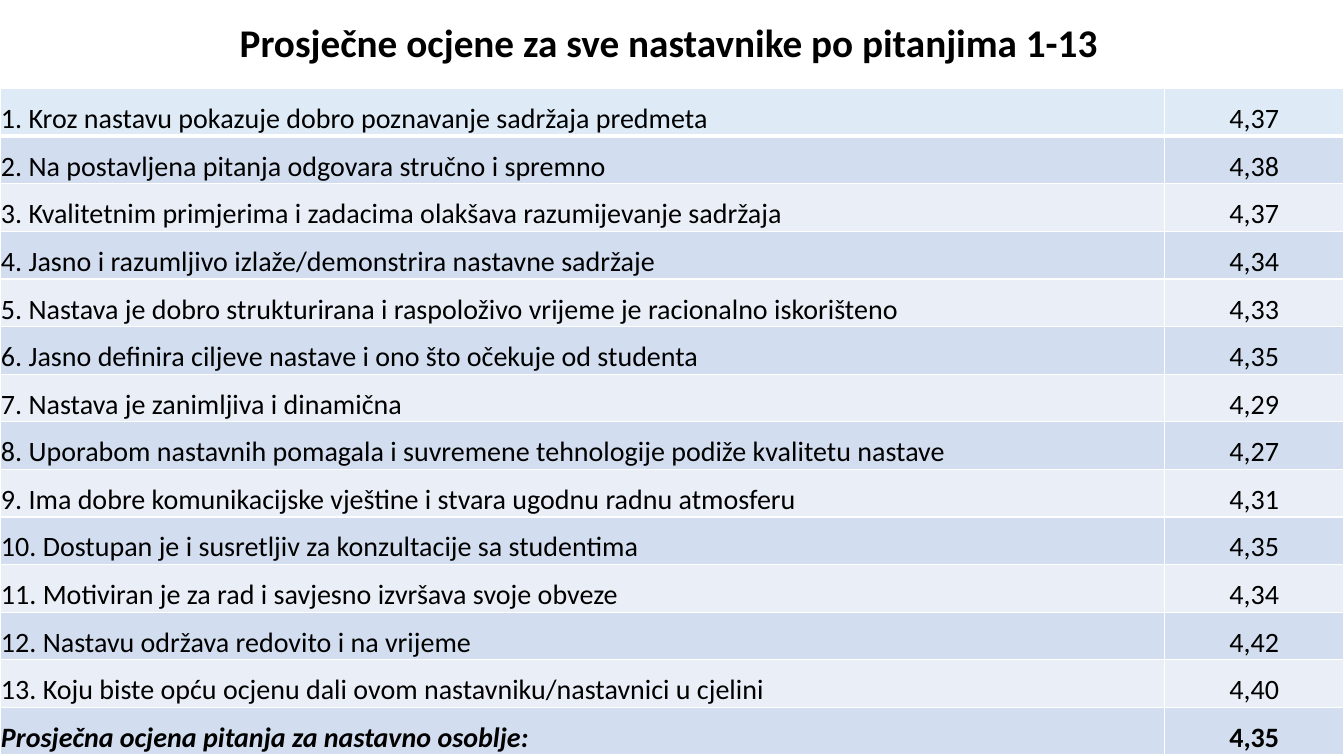
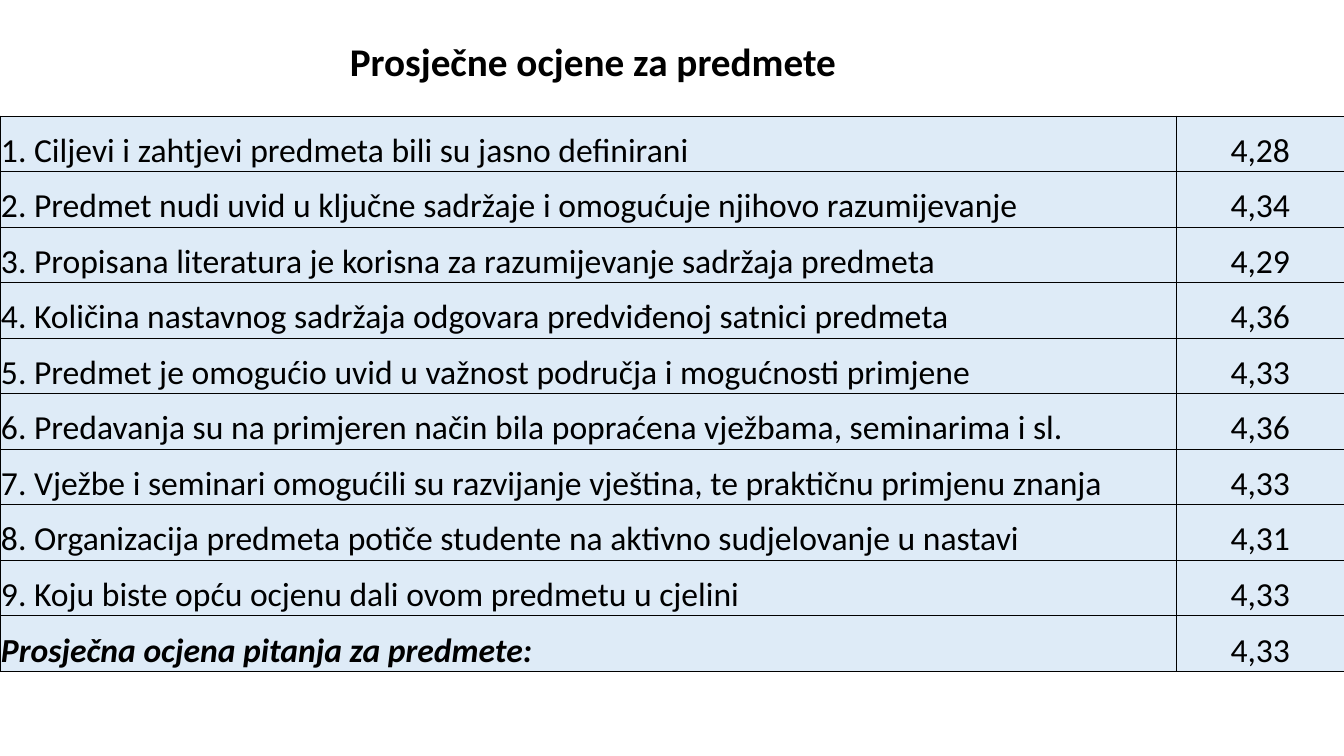
from dataclasses import dataclass

from lxml import etree
from pptx import Presentation
from pptx import util as u
from pptx.dml.color import RGBColor
from pptx.enum import text
from pptx.oxml import ns


@dataclass(frozen=True)
class Theme:
    font: str = "Calibri"
    ink: str = "000000"
    white: str = "FFFFFF"
    lead: str = "DEEBF7"
    band_dark: str = "D2DEEF"
    band_light: str = "EAEFF7"
    title_size: int = 28
    teacher_size: int = 20
    course_size: int = 24
    hairline: float = 0.5
    line: float = 1
    heavy_line: float = 3


@dataclass(frozen=True)
class Grid:
    size: int
    fills: list
    border: str
    line: float
    first_line: float
    bold_average: bool


THEME = Theme()
PAGE_WIDTH, PAGE_HEIGHT = 13.33, 7.5
TITLE_ONLY = 5

TEACHER_RATINGS = [
    ("Kroz nastavu pokazuje dobro poznavanje sadržaja predmeta", "4,37"),
    ("Na postavljena pitanja odgovara stručno i spremno", "4,38"),
    ("Kvalitetnim primjerima i zadacima olakšava razumijevanje sadržaja", "4,37"),
    ("Jasno i razumljivo izlaže/demonstrira nastavne sadržaje", "4,34"),
    ("Nastava je dobro strukturirana i raspoloživo vrijeme je racionalno iskorišteno", "4,33"),
    ("Jasno definira ciljeve nastave i ono što očekuje od studenta", "4,35"),
    ("Nastava je zanimljiva i dinamična", "4,29"),
    ("Uporabom nastavnih pomagala i suvremene tehnologije podiže kvalitetu nastave", "4,27"),
    ("Ima dobre komunikacijske vještine i stvara ugodnu radnu atmosferu", "4,31"),
    ("Dostupan je i susretljiv za konzultacije sa studentima", "4,35"),
    ("Motiviran je za rad i savjesno izvršava svoje obveze", "4,34"),
    ("Nastavu održava redovito i na vrijeme", "4,42"),
    ("Koju biste opću ocjenu dali ovom nastavniku/nastavnici u cjelini", "4,40"),
]
TEACHER_AVERAGE = ("Prosječna ocjena pitanja za nastavno osoblje:", "4,35")

COURSE_RATINGS = [
    ("Ciljevi i zahtjevi predmeta bili su jasno definirani", "4,28"),
    ("Predmet nudi uvid u ključne sadržaje i omogućuje njihovo razumijevanje", "4,34"),
    ("Propisana literatura je korisna za razumijevanje sadržaja predmeta", "4,29"),
    ("Količina nastavnog sadržaja odgovara predviđenoj satnici predmeta", "4,36"),
    ("Predmet je omogućio uvid u važnost područja i mogućnosti primjene", "4,33"),
    ("Predavanja su na primjeren način bila popraćena vježbama, seminarima i sl.", "4,36"),
    ("Vježbe i seminari omogućili su razvijanje vještina, te praktičnu primjenu znanja", "4,33"),
    ("Organizacija predmeta potiče studente na aktivno sudjelovanje u nastavi", "4,31"),
    ("Koju biste opću ocjenu dali ovom predmetu u cjelini", "4,33"),
]
COURSE_AVERAGE = ("Prosječna ocjena pitanja za predmete:", "4,33")


def set_font(para, size, bold=False, italic=False):
    font = para.font
    font.name, font.size = THEME.font, u.Pt(size)
    font.bold, font.italic = bold, italic
    font.color.rgb = RGBColor.from_string(THEME.ink)


def add_title(page, wording, box, align):
    title = page.shapes.title
    title.left, title.top, title.width, title.height = map(u.Inches, box)
    frame = title.text_frame
    frame.text = wording
    frame.word_wrap = True
    frame.auto_size = text.MSO_AUTO_SIZE.NONE
    para = frame.paragraphs[0]
    para.alignment = align
    set_font(para, THEME.title_size, bold=True)


def set_borders(cell, color, widths):
    properties = cell._tc.get_or_add_tcPr()
    for index, (side, width) in enumerate(zip("LRTB", widths)):
        line = etree.Element(ns.qn(f"a:ln{side}"), w=str(u.Pt(width)))
        fill = etree.SubElement(line, ns.qn("a:solidFill"))
        etree.SubElement(fill, ns.qn("a:srgbClr"), val=color)
        properties.insert(index, line)


def fill_cell(cell, wording, grid, fill, align, bold, italic):
    cell.text = wording
    cell.vertical_anchor = text.MSO_ANCHOR.BOTTOM
    cell.margin_left = cell.margin_top = cell.margin_right = u.Inches(0.01)
    cell.margin_bottom = 0
    cell.fill.solid()
    cell.fill.fore_color.rgb = RGBColor.from_string(fill)
    para = cell.text_frame.paragraphs[0]
    para.alignment = align
    set_font(para, grid.size, bold, italic)


def add_ratings(page, ratings, average, box, label_width, grid):
    rows = [(f"{number}. {label}", score)
            for number, (label, score) in enumerate(ratings, 1)] + [average]
    left, top, width, height = box
    table = page.shapes.add_table(len(rows), 2, *map(u.Inches, box)).table
    table.first_row = table.horz_banding = False
    table.columns[0].width = u.Inches(label_width)
    table.columns[1].width = u.Inches(width - label_width)
    for index, (label, score) in enumerate(rows):
        table.rows[index].height = u.Inches(height / len(rows))
        is_average = index == len(rows) - 1
        fill = grid.fills[0] if index == 0 else grid.fills[1 + (index - 1) % 2]
        above = grid.first_line if index == 1 else grid.line
        below = grid.first_line if index == 0 else grid.line
        label_cell, score_cell = table.rows[index].cells
        fill_cell(label_cell, label, grid, fill, text.PP_ALIGN.LEFT,
                  is_average, is_average)
        fill_cell(score_cell, score, grid, fill, text.PP_ALIGN.CENTER,
                  is_average and grid.bold_average, False)
        for cell in (label_cell, score_cell):
            set_borders(cell, grid.border, (grid.line, grid.line, above, below))


def add_teacher_page(deck):
    page = deck.slides.add_slide(deck.slide_layouts[TITLE_ONLY])
    grid = Grid(THEME.teacher_size,
                [THEME.lead, THEME.band_dark, THEME.band_light],
                THEME.white, THEME.line, THEME.heavy_line, True)
    add_ratings(page, TEACHER_RATINGS, TEACHER_AVERAGE,
                (0, 0.88, PAGE_WIDTH, 6.61), 11.55, grid)
    add_title(page, "Prosječne ocjene za sve nastavnike po pitanjima 1-13",
              (1.87, 0.13, 9.52, 0.57), text.PP_ALIGN.CENTER)


def add_course_page(deck):
    page = deck.slides.add_slide(deck.slide_layouts[TITLE_ONLY])
    grid = Grid(THEME.course_size, [THEME.lead] * 3,
                THEME.ink, THEME.hairline, THEME.hairline, False)
    add_ratings(page, COURSE_RATINGS, COURSE_AVERAGE,
                (0, 1.15, PAGE_WIDTH, 5.51), 11.67, grid)
    add_title(page, "Prosječne ocjene za predmete",
              (3.37, 0.32, 5.07, 0.57), text.PP_ALIGN.LEFT)


def main():
    deck = Presentation()
    deck.slide_width = u.Inches(PAGE_WIDTH)
    deck.slide_height = u.Inches(PAGE_HEIGHT)
    add_teacher_page(deck)
    add_course_page(deck)
    deck.save("out.pptx")


if __name__ == "__main__":
    main()
